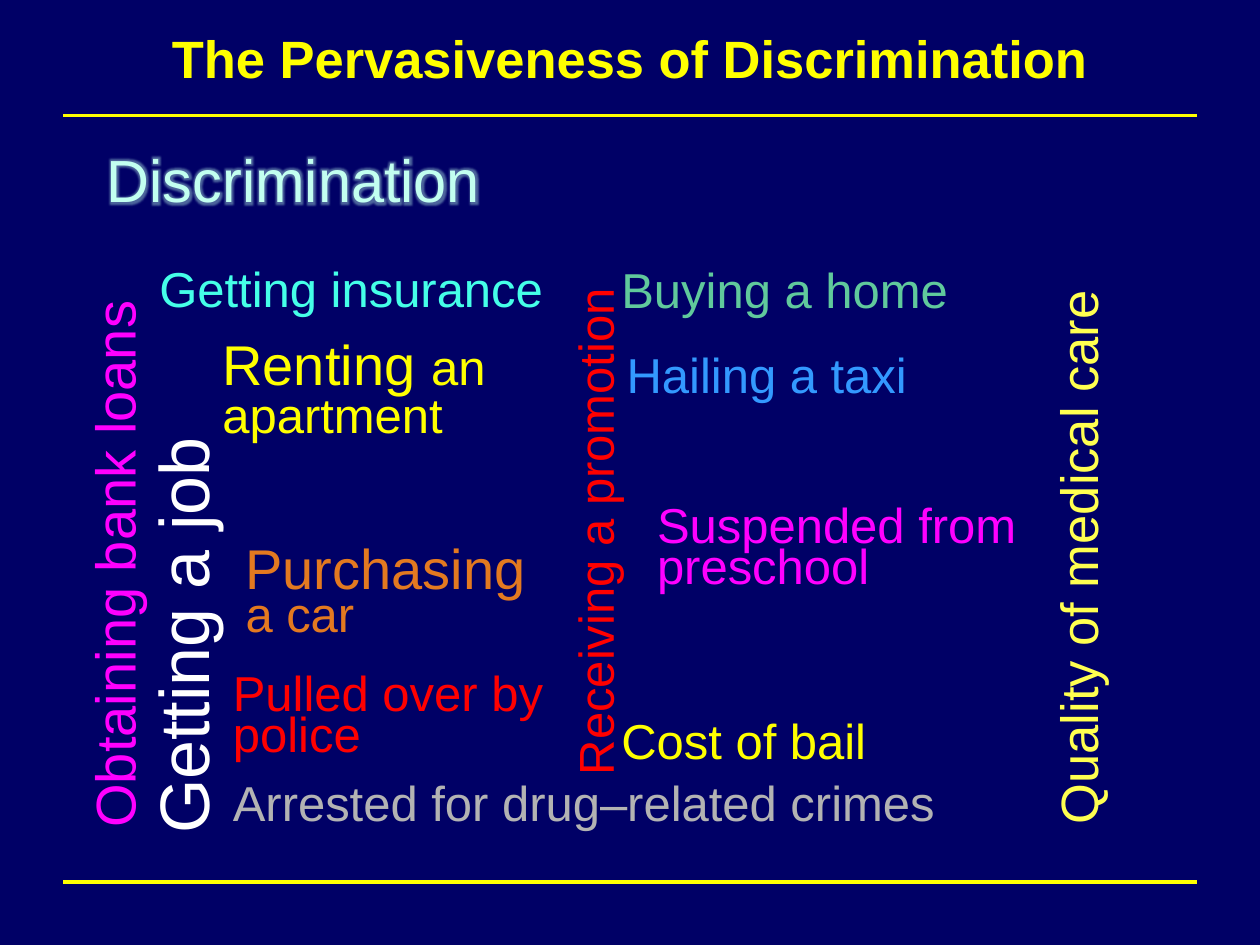
from lxml.etree import SubElement
from pptx import Presentation
from pptx.dml.color import RGBColor
from pptx.enum.shapes import MSO_CONNECTOR
from pptx.enum.text import MSO_ANCHOR, PP_ALIGN
from pptx.oxml import parse_xml
from pptx.oxml.ns import qn
from pptx.util import Inches, Pt

theme = {
    "font": "Arial", "back": "000066", "yellow": "FFFF00", "white": "FFFFFF",
    "red": "FF0000", "pink": "FF00FF", "blue": "3399FF", "green": "60C99C",
    "aqua": "45FFE8", "gray": "B3B3B3", "lemon": "FFFF50", "ice": "C2FFF0",
    "orange": "E37920",
    "base": 28, "title": 30, "large": 32, "head": 34, "huge": 40,
}

deck = Presentation()
deck.slide_width, deck.slide_height = Inches(10), Inches(7.5)
cell = deck.slide_width / 120  # grid of 120 columns by 90 rows


def grid(*cells):
    return [round(n * cell) for n in cells]


def style(font, size, color):
    font.name = theme["font"]
    font.size = Pt(theme[size])
    font.color.rgb = RGBColor.from_string(theme[color])


slide = deck.slides.add_slide(deck.slide_layouts[5])
slide.background.fill.solid()
slide.background.fill.fore_color.rgb = RGBColor.from_string(theme["back"])

# Title
title = slide.shapes.title
title.left, title.top, title.width, title.height = grid(6, -2, 108, 15)
title.text_frame.text = "The Pervasiveness of Discrimination"
title.text_frame.vertical_anchor = MSO_ANCHOR.MIDDLE
para = title.text_frame.paragraphs[0]
para.alignment = PP_ALIGN.CENTER
style(para.font, "title", "yellow")
para.font.bold = True

# Rules above and below the words
for row in (11, 84):
    rule = slide.shapes.add_connector(MSO_CONNECTOR.STRAIGHT, *grid(6, row, 114, row))
    rule.line.color.rgb = RGBColor.from_string(theme["yellow"])
    rule.line.width = Pt(2.25)
    SubElement(rule._element.spPr, qn("a:effectLst"))

# Words: column, row, width, height, turned, color, line spacing, lines of (text, size)
words = [
    (12.7, 37, 9.2, 43.6, True, "white", 1, [[("Getting a job", "huge")]]),
    (53.2, 21.8, 6.8, 53.2, True, "red", 1, [[("Receiving a promotion", "base")]]),
    (7, 21, 7.7, 59, True, "pink", 1, [[("Obtaining bank loans", "large")]]),
    (99, 22, 7.3, 57.7, True, "lemon", 1, [[("Quality of medical care", "title")]]),
    (58.5, 32.2, 31.4, 6.8, False, "blue", 1, [[("Hailing a taxi", "base")]]),
    (58, 24.1, 36.2, 6.8, False, "green", 1, [[("Buying a home", "base")]]),
    (21, 64, 60, 10.6, False, "red", 0.7,
     [[("Pulled over by", "base")], [("police", "base")]]),
    (20, 32, 29.4, 12.2, False, "yellow", 0.8,
     [[("Renting ", "large"), ("an", "base")], [("apartment", "base")]]),
    (14, 24, 44, 6.8, False, "aqua", 1, [[("Getting insurance", "base")]]),
    (21, 73, 85, 6.8, False, "gray", 1, [[("Arrested for drug–related crimes", "base")]]),
    (9, 13, 98, 10, False, "ice", 1, [[("Discrimination", "head")]]),
    (22.2, 52, 31.8, 11.2, False, "orange", 0.7,
     [[("Purchasing", "large")], [("a car", "base")]]),
    (61.4, 48, 39.6, 10.6, False, "pink", 0.7,
     [[("Suspended from", "base")], [("preschool", "base")]]),
    (58, 67.1, 28.1, 6.8, False, "yellow", 1, [[("Cost of bail", "base")]]),
]
for col, row, wide, high, turned, color, space, lines in words:
    if turned:  # swap the sides about the same center
        col, row = col + (wide - high) / 2, row + (high - wide) / 2
        wide, high = high, wide
    box = slide.shapes.add_textbox(*grid(col, row, wide, high))
    box.rotation = 270 if turned else 0
    frame = box.text_frame
    frame.word_wrap = True
    for i, line in enumerate(lines):
        para = frame.add_paragraph() if i else frame.paragraphs[0]
        para.line_spacing = space
        style(para.font, line[0][1], color)
        for text, size in line:
            run = para.add_run()
            run.text = text
            style(run.font, size, color)

    # Glow around the heading word
    if color == "ice":
        fill = run._r.rPr.find(qn("a:solidFill"))
        fill.addnext(parse_xml(
            '<a:effectLst xmlns:a="http://schemas.openxmlformats.org/drawingml/2006/main">'
            f'<a:glow rad="63500"><a:srgbClr val="{theme["ice"]}">'
            '<a:alpha val="40000"/></a:srgbClr></a:glow></a:effectLst>'))

deck.save("out.pptx")
